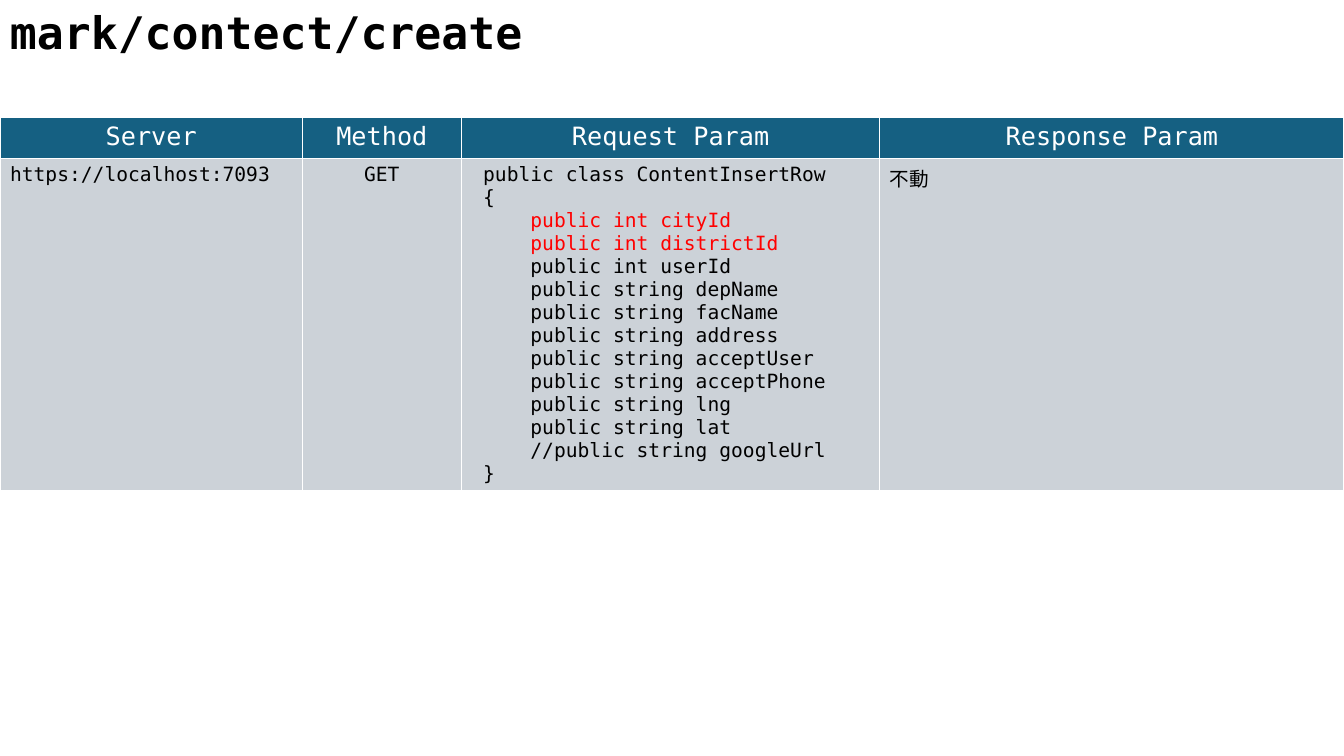
from pptx import Presentation
from pptx.dml.color import RGBColor
from pptx.enum.text import PP_ALIGN
from pptx.util import Pt

FONT = "DejaVu Sans Mono"
COLORS = {"header": "156082", "body": "CCD2D8", "light": "FFFFFF",
          "ink": "000000", "changed": "FF0000"}
HEADERS = ["Server", "Method", "Request Param", "Response Param"]
COLUMN_WIDTHS = [216, 113.5, 299, 331.5]
ROW_HEIGHTS = [29.2, 236]
CHANGED_FIELDS = ["int cityId", "int districtId"]
REQUEST_CLASS = """ public class ContentInsertRow
 {
     public int cityId
     public int districtId
     public int userId
     public string depName
     public string facName
     public string address
     public string acceptUser
     public string acceptPhone
     public string lng
     public string lat
     //public string googleUrl
 }"""
ENDPOINT = ["https://localhost:7093", "GET", REQUEST_CLASS, "不動"]


def style_line(line, size, color, bold=False, align=PP_ALIGN.LEFT):
    """Set the font and alignment of one paragraph."""
    line.alignment = align
    line.font.name = FONT
    line.font.size = Pt(size)
    line.font.bold = bold
    line.font.color.rgb = RGBColor.from_string(COLORS[color])


def fill_cell(cell, content, fill):
    """Write content into a table cell over a solid fill."""
    cell.fill.solid()
    cell.fill.fore_color.rgb = RGBColor.from_string(COLORS[fill])
    cell.text_frame.text = content
    return cell.text_frame.paragraphs


def add_title(slide, left, top, width, height):
    """Place the endpoint path as the slide title."""
    frame = slide.shapes.add_textbox(Pt(left), Pt(top), Pt(width), Pt(height)).text_frame
    frame.word_wrap = True
    frame.text = "mark/contect/create"
    style_line(frame.paragraphs[0], 32, "ink", bold=True)


def add_endpoint_table(slide, left, top):
    """Place the table of request and response parameters."""
    table = slide.shapes.add_table(
        len(ROW_HEIGHTS), len(HEADERS), Pt(left), Pt(top),
        Pt(sum(COLUMN_WIDTHS)), Pt(sum(ROW_HEIGHTS))).table
    for row, height in zip(table.rows, ROW_HEIGHTS):
        row.height = Pt(height)
    for index, (header, detail) in enumerate(zip(HEADERS, ENDPOINT)):
        table.columns[index].width = Pt(COLUMN_WIDTHS[index])
        for line in fill_cell(table.cell(0, index), header, "header"):
            style_line(line, 18, "light", align=PP_ALIGN.CENTER)
        align = PP_ALIGN.CENTER if header == "Method" else PP_ALIGN.LEFT
        for line in fill_cell(table.cell(1, index), detail, "body"):
            changed = line.text.endswith(tuple(CHANGED_FIELDS))
            style_line(line, 14, "changed" if changed else "ink", align=align)


def main():
    """Build and save the endpoint slide."""
    deck = Presentation()
    deck.slide_width, deck.slide_height = Pt(960), Pt(540)
    slide = deck.slides.add_slide(deck.slide_layouts[6])
    add_endpoint_table(slide, 0, 83.8)
    add_title(slide, 0, 0, 460, 46)
    deck.save("out.pptx")


if __name__ == "__main__":
    main()
